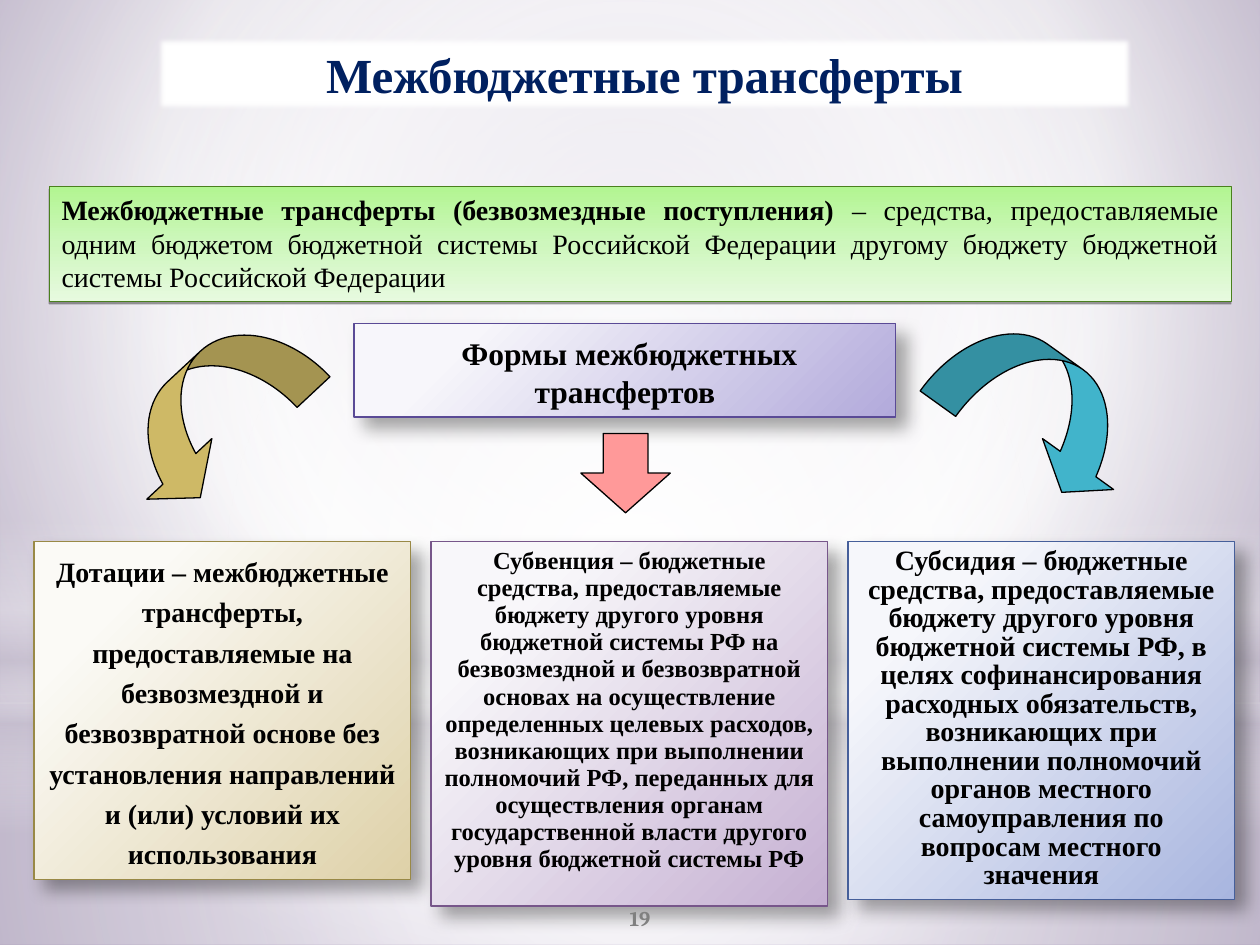
from dataclasses import dataclass

from lxml.etree import SubElement
from pptx import Presentation
from pptx.dml.color import RGBColor
from pptx.enum.shapes import MSO_SHAPE as Form
from pptx.enum.text import MSO_ANCHOR as Anchor, MSO_AUTO_SIZE as Auto, PP_ALIGN as Align
from pptx.oxml.ns import qn
from pptx.util import Inches, Pt


@dataclass(frozen=True)
class Theme:
    serif: str = "Times New Roman"
    foot: str = "Cambria"
    ink: str = "000000"
    navy: str = "002060"
    gray: str = "808080"
    white: str = "FFFFFF"
    haze: str = "C9C2D1"
    gold: str = "CEB966"
    teal: str = "41B4CB"
    rose: str = "FF9999"
    edge: str = "4A801E"
    back: tuple = ((0, "C1B7CD"), (60, "FFFFFF"), (100, "A191B5"))
    green: tuple = ((0, "B2F591"), (50, "CEF7BD"), (100, "E7FADF"))
    # light stop, dark stop, line
    violet: tuple = ("F7F6FB", "B2AADB", "5A4A96")
    sand: tuple = ("FBFAF6", "DED1A8", "998946")
    plum: tuple = ("F8F7FA", "C5B0D2", "77568A")
    blue: tuple = ("F6F7FB", "A8B5DF", "465F9A")
    head: int = 28
    lead: int = 20
    sub: int = 18
    body: int = 16
    small: int = 14
    note: int = 12


MID = (50, 50, 50, 50)
CORNER = (-15, -15, 115, 115)
FLAT = (38, 0, 1.6, 90)
DROP = (35, 10.2, 8, 45)


def node(parent, tag, **attrs):
    return SubElement(parent, qn(tag), {k: str(v) for k, v in attrs.items()})


class Page:
    """Style and slide; places are columns and rows of a 100 by 75 grid."""

    def __init__(self, deck, theme):
        self.theme = theme
        self.slide = deck.slides.add_slide(deck.slide_layouts[5])
        self.cols = deck.slide_width / 100
        self.rows = deck.slide_height / 75

    def place(self, at):
        left, top, wide, high = at
        return [round(n) for n in (left * self.cols, top * self.rows,
                                   wide * self.cols, high * self.rows)]

    def blend(self, fill, owner, stops, to=None, turn=90):
        """Gradient of (percent, colour[, opacity]); radial if 'to' is given."""
        fill.gradient()
        grad = owner.find(".//" + qn("a:gradFill"))
        for child in list(grad):
            grad.remove(child)
        items = node(grad, "a:gsLst")
        for pos, tint, *alpha in stops:
            stop = node(items, "a:gs", pos=pos * 1000)
            color = node(stop, "a:srgbClr", val=tint)
            if alpha:
                node(color, "a:alpha", val=alpha[0] * 1000)
        if to:
            focus = node(grad, "a:path", path="circle")
            node(focus, "a:fillToRect", **{s: n * 1000 for s, n in zip("ltrb", to)})
        else:
            node(grad, "a:lin", ang=turn * 60000, scaled=0)

    def backdrop(self, stops, to):
        self.blend(self.slide.background.fill, self.slide.element, stops, to)

    def shape(self, form, at, fill, line=None, width=0.75, to=None):
        item = self.slide.shapes.add_shape(form, *self.place(at))
        item.shadow.inherit = False
        if isinstance(fill, str):
            item.fill.solid()
            item.fill.fore_color.rgb = RGBColor.from_string(fill)
        else:
            self.blend(item.fill, item.element, fill, to)
        if line:
            item.line.color.rgb = RGBColor.from_string(line)
            item.line.width = Pt(width)
        else:
            item.line.fill.background()
        return item

    def shade(self, item, alpha, blur, dist, turn):
        effect = item.element.spPr.find(qn("a:effectLst"))
        cast = node(effect, "a:outerShdw", blurRad=Pt(blur), dist=Pt(dist),
                    dir=turn * 60000, algn="tl", rotWithShape=0)
        node(node(cast, "a:srgbClr", val=self.theme.ink), "a:alpha", val=alpha * 1000)

    def label(self, item, runs, align=Align.CENTER, space=None, anchor=Anchor.TOP,
              tint=None, font=None):
        """Fill one paragraph with runs of (text, size, bold)."""
        frame = item.text_frame
        frame.word_wrap = True
        frame.auto_size = Auto.NONE
        frame.vertical_anchor = anchor
        para = frame.paragraphs[0]
        para.alignment = align
        if space:
            para.line_spacing = space
        for text, size, bold in runs:
            run = para.add_run()
            run.text = text
            run.font.size = Pt(size)
            run.font.bold = bold
            run.font.name = font or self.theme.serif
            run.font.color.rgb = RGBColor.from_string(tint or self.theme.ink)

    def title(self, at, text):
        item = self.slide.shapes.title
        item.left, item.top, item.width, item.height = self.place(at)
        item.fill.solid()
        item.fill.fore_color.rgb = RGBColor.from_string(self.theme.white)
        node(node(item.element.spPr, "a:effectLst"), "a:softEdge", rad=Pt(2.5))
        self.label(item, [(text, self.theme.head, True)], tint=self.theme.navy)
        item.element.getparent().append(item.element)  # above the backdrop

    def card(self, at, hue, runs, space=None):
        light, dark, line = hue
        item = self.shape(Form.RECTANGLE, at, ((20, light), (100, dark)), line, to=CORNER)
        self.shade(item, *DROP)
        self.label(item, runs, space=space)

    def banner(self, at, runs):
        item = self.shape(Form.RECTANGLE, at, self.theme.green, self.theme.edge, 0.5)
        self.shade(item, *FLAT)
        self.label(item, runs, Align.JUSTIFY)

    def arrow(self, form, at, fill, turn=0, bends=()):
        item = self.shape(form, at, fill, self.theme.ink)
        item.rotation = turn
        for i, bend in enumerate(bends):
            item.adjustments[i] = bend

    def number(self, at, text):
        item = self.slide.shapes.add_textbox(*self.place(at))
        self.label(item, [(text, self.theme.note, True)], anchor=Anchor.MIDDLE,
                   tint=self.theme.gray, font=self.theme.foot)


def main():
    deck = Presentation()
    deck.slide_width, deck.slide_height = Inches(10), Inches(7.5)
    theme = Theme()
    page = Page(deck, theme)
    white, haze = theme.white, theme.haze

    page.backdrop(theme.back, (20, 10, 20, 60))
    page.shape(Form.RECTANGLE, (0, 55.8, 100, 19.2),
               ((0, white, 91), (37, white, 76), (100, haze, 79)), to=MID)
    page.shape(Form.RECTANGLE, (0, 0, 100, 55.8),
               ((0, white, 89), (48, white, 62), (100, haze, 79)), to=MID)
    page.shape(Form.RECTANGLE, (0, 41.2, 100, 25),
               ((0, white, 0), (29, white, 30), (45, haze, 40),
                (55, white, 26), (65, haze, 60), (100, white, 0)))
    page.shape(Form.OVAL, (0, 17.5, 100, 55.8), ((0, white, 100), (56, white, 0)), to=MID)

    page.title((12.5, 3, 77.3, 5.7), "Межбюджетные трансферты")
    page.banner((3.9, 14.8, 93.8, 9.1), [
        ("Межбюджетные трансферты (безвозмездные поступления) ", theme.body, True),
        ("– средства, предоставляемые одним бюджетом бюджетной системы Российской "
         "Федерации другому бюджету бюджетной системы Российской Федерации",
         theme.body, False)])
    page.card((28.1, 25.7, 43, 7.4), theme.violet, [
        (" ", theme.lead, True), ("Формы межбюджетных трансфертов", theme.sub, True)])

    page.arrow(Form.CURVED_RIGHT_ARROW, (12.6, 24, 8.5, 17.6), theme.gold, 47,
               (0.42, 0.83, 0.33))
    page.arrow(Form.CURVED_LEFT_ARROW, (78.2, 23.8, 8.9, 17.3), theme.teal, 305.6,
               (0.39, 0.78, 0.29))
    page.arrow(Form.DOWN_ARROW, (46.1, 34.4, 7.1, 6.3), theme.rose)

    cards = (
        (29.9, 26.8, theme.sand, theme.body, 1.2,
         "Дотации – межбюджетные трансферты, предоставляемые на безвозмездной и "
         "безвозвратной основе без установления направлений и (или) условий их "
         "использования"),
        (31.5, 28.9, theme.plum, theme.small, 0.92,
         "Субвенция – бюджетные средства, предоставляемые бюджету другого уровня "
         "бюджетной системы РФ на безвозмездной и безвозвратной основах на "
         "осуществление определенных целевых расходов, возникающих при выполнении "
         "полномочий РФ, переданных для осуществления органам государственной "
         "власти другого уровня бюджетной системы РФ"),
        (30.7, 28.4, theme.blue, theme.body, 0.85,
         "Субсидия – бюджетные средства, предоставляемые бюджету другого уровня "
         "бюджетной системы РФ, в целях софинансирования расходных обязательств, "
         "возникающих при выполнении полномочий органов местного самоуправления "
         "по вопросам местного значения"),
    )
    left, gap = 2.7, 1.6
    for wide, high, hue, size, space, text in cards:
        page.card((left, 43, wide, high), hue, [(text, size, True)], space)
        left += wide + gap

    page.number((40.8, 70.9, 20, 4), "19")
    deck.save("out.pptx")


if __name__ == "__main__":
    main()
